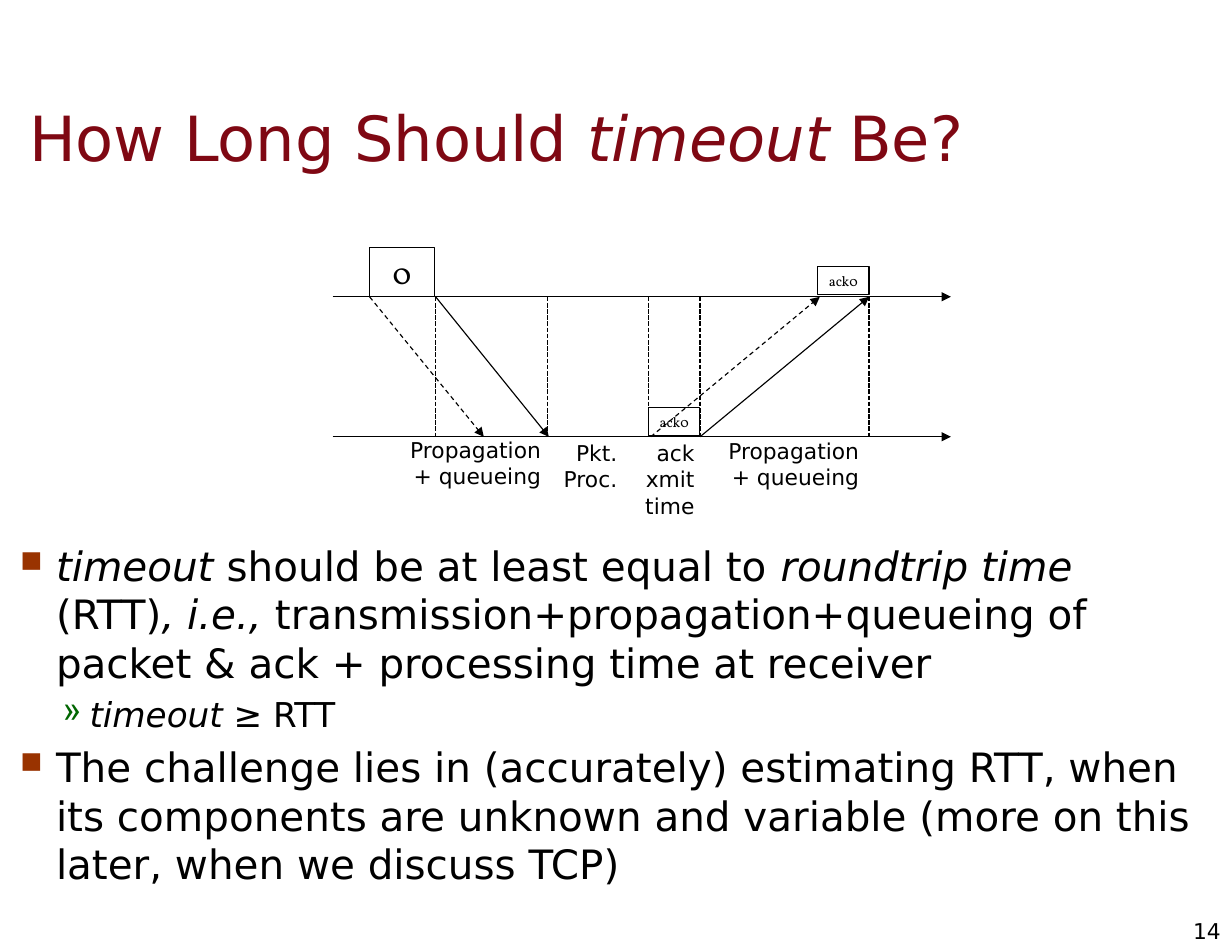
"""Build a slide on choosing a retransmission timeout."""
from lxml import etree
from pptx import Presentation
from pptx.dml.color import RGBColor
from pptx.enum.dml import MSO_LINE_DASH_STYLE as Dash
from pptx.enum.shapes import MSO_CONNECTOR as Connector, MSO_SHAPE as Shape
from pptx.enum.text import MSO_ANCHOR as Anchor, PP_ALIGN as Align
from pptx.oxml.ns import qn
from pptx.util import Inches, Pt

COLORS = {
    "title": "7F0813",
    "text": "000000",
    "box": "FFFFFF",
    "square": "993300",
    "chevron": "006600",
}
SENDER, RECEIVER = 2.65, 3.9
PACKET_START, PACKET_END, PACKET_ARRIVAL = 3.3, 3.89, 4.89
ACK_START, ACK_END, ACK_ARRIVAL = 5.79, 6.25, 7.76
LEVELS = {
    0: {"size": 26, "margin": 0.32, "hang": 0.32, "bullet": "■", "color": "square", "scale": 75},
    1: {"size": 22, "margin": 0.62, "hang": 0.24, "bullet": "»", "color": "chevron", "scale": 100},
}
BODY = [
    (0, [("timeout", True), (" should be at least equal to ", False),
         ("roundtrip time ", True), ("(RTT)", False), (", i.e., ", True),
         ("transmission+propagation+queueing of packet & ack + processing time at receiver", False)]),
    (1, [("timeout ", True), ("≥ RTT", False)]),
    (0, [("The challenge lies in (accurately) estimating RTT, when its components are unknown "
          "and variable (more on this later, when we discuss TCP)", False)]),
]


class SlideBuilder:
    """Hold the style and the current slide."""

    font = "DejaVu Sans"
    box_font = "Vollkorn"

    def __init__(self, slide):
        self.slide = slide

    def color(self, name):
        return RGBColor.from_string(COLORS[name])

    def style(self, run, size, color="text", italic=False, font=None):
        run.font.name = font or self.font
        run.font.size = Pt(size)
        run.font.italic = italic
        run.font.color.rgb = self.color(color)

    def frame(self, shape, insets, anchor=Anchor.TOP, wrap=True):
        text_frame = shape.text_frame
        text_frame.word_wrap = wrap
        text_frame.vertical_anchor = anchor
        text_frame.margin_left = text_frame.margin_right = Inches(insets[0])
        text_frame.margin_top = text_frame.margin_bottom = Inches(insets[1])
        return text_frame

    def text_box(self, place, insets, anchor=Anchor.TOP):
        shape = self.slide.shapes.add_textbox(*map(Inches, place))
        return self.frame(shape, insets, anchor)

    def runs(self, paragraph, parts, size, color="text"):
        for text, italic in parts:
            run = paragraph.add_run()
            run.text = text
            self.style(run, size, color, italic)

    def title(self, place, parts):
        text_frame = self.text_box(place, (0.11, 0.06), Anchor.MIDDLE)
        self.runs(text_frame.paragraphs[0], parts, 40, "title")

    def label(self, place, text, insets=(0.1, 0.05), anchor=Anchor.TOP):
        text_frame = self.text_box(place, insets, anchor)
        text_frame.text = text
        paragraph = text_frame.paragraphs[0]
        paragraph.alignment = Align.RIGHT
        self.style(paragraph.runs[0], 14)

    def bullets(self, place, items):
        text_frame = self.text_box(place, (0.11, 0.06))
        for index, (level, parts) in enumerate(items):
            look = LEVELS[level]
            paragraph = text_frame.paragraphs[0] if index == 0 else text_frame.add_paragraph()
            paragraph.level = level
            if index:
                paragraph.space_before = Pt(look["size"] * 0.2)
            properties = paragraph._p.get_or_add_pPr()
            properties.set("marL", str(Inches(look["margin"])))
            properties.set("indent", str(-Inches(look["hang"])))
            bullet_color = etree.SubElement(properties, qn("a:buClr"))
            etree.SubElement(bullet_color, qn("a:srgbClr"), val=COLORS[look["color"]])
            etree.SubElement(properties, qn("a:buSzPct"), val=str(look["scale"] * 1000))
            etree.SubElement(properties, qn("a:buChar"), char=look["bullet"])
            self.runs(paragraph, parts, look["size"])

    def packet(self, place, text, size):
        shape = self.slide.shapes.add_shape(Shape.RECTANGLE, *map(Inches, place))
        shape.shadow.inherit = False
        shape.fill.solid()
        shape.fill.fore_color.rgb = self.color("box")
        shape.line.color.rgb = self.color("text")
        shape.line.width = Pt(0.75)
        text_frame = self.frame(shape, (0.1, 0.05), Anchor.MIDDLE, wrap=False)
        text_frame.text = text
        paragraph = text_frame.paragraphs[0]
        paragraph.alignment = Align.CENTER
        self.style(paragraph.runs[0], size, font=self.box_font)

    def line(self, start, end, width=0.75, dash=None, arrow=True):
        connector = self.slide.shapes.add_connector(
            Connector.STRAIGHT, *map(Inches, (*start, *end)))
        connector.line.color.rgb = self.color("text")
        connector.line.width = Pt(width)
        if dash:
            connector.line.dash_style = dash
        if arrow:
            etree.SubElement(connector.line._get_or_add_ln(), qn("a:tailEnd"), type="triangle")
        etree.SubElement(connector._element.spPr, qn("a:effectLst"))


def main():
    presentation = Presentation()
    presentation.slide_width = Inches(11)
    presentation.slide_height = Inches(8.5)
    builder = SlideBuilder(presentation.slides.add_slide(presentation.slide_layouts[6]))

    builder.title((0.15, 0.7, 10.53, 1.04),
                  [("How Long Should ", False), ("timeout", True), (" Be?", False)])
    builder.bullets((0.07, 4.77, 10.69, 3.73), BODY)
    builder.label((10.56, 8.19, 0.34, 0.24), "14", (0, 0), Anchor.MIDDLE)

    for timeline in (SENDER, RECEIVER):
        builder.line((2.97, timeline), (8.49, timeline))

    builder.packet((PACKET_START, 2.21, 0.58, 0.44), "0", 20)
    for left, top in ((ACK_START, 3.64), (7.3, 2.38)):
        builder.packet((left, top, 0.46, 0.25), "ack0", 9)

    for moment in (PACKET_END, PACKET_ARRIVAL, ACK_START, ACK_END, ACK_ARRIVAL):
        builder.line((moment, SENDER), (moment, RECEIVER), 1, Dash.SQUARE_DOT, arrow=False)

    builder.line((PACKET_START, SENDER), (4.32, RECEIVER), dash=Dash.DASH)
    builder.line((PACKET_END, SENDER), (4.9, RECEIVER))
    builder.line((5.81, RECEIVER), (7.32, SENDER), dash=Dash.DASH)
    builder.line((ACK_END, RECEIVER), (ACK_ARRIVAL, SENDER))

    for place, text in (
        ((3.46, 3.85, 1.47, 0.57), "Propagation + queueing"),
        ((4.84, 3.88, 0.77, 0.57), "Pkt. Proc."),
        ((5.53, 3.88, 0.77, 0.81), "ack xmit time"),
        ((6.3, 3.86, 1.47, 0.57), "Propagation + queueing"),
    ):
        builder.label(place, text)

    presentation.save("out.pptx")


if __name__ == "__main__":
    main()
